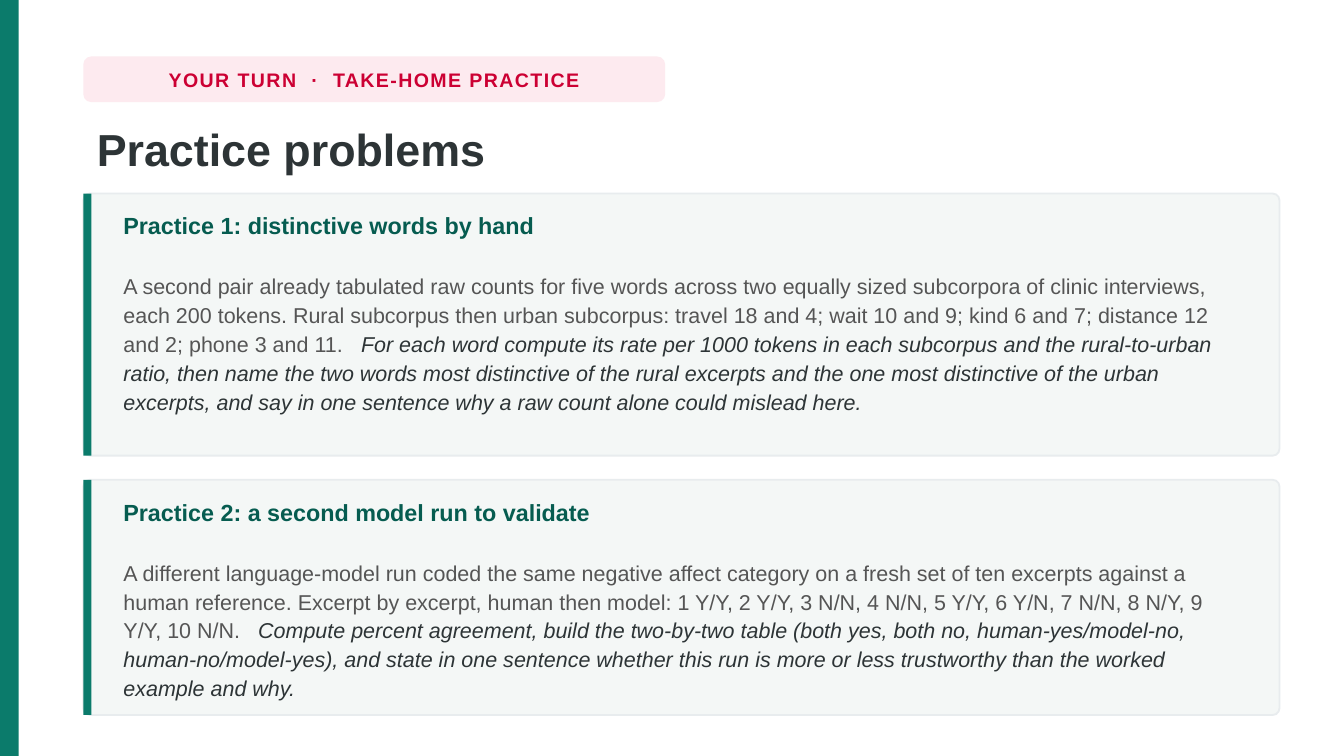
from pptx import Presentation
from pptx.dml.color import RGBColor
from pptx.enum.shapes import MSO_SHAPE
from pptx.enum.text import MSO_ANCHOR, MSO_AUTO_SIZE, PP_ALIGN
from pptx.util import Inches, Pt

TAG = ["YOUR TURN", "·", "TAKE-HOME PRACTICE"]
TITLE = "Practice problems"
CARDS = [
    {
        "top": 1.44, "height": 1.95,
        "head": "Practice 1: distinctive words by hand",
        "data": "A second pair already tabulated raw counts for five words across "
                "two equally sized subcorpora of clinic interviews, each 200 tokens. "
                "Rural subcorpus then urban subcorpus: travel 18 and 4; wait 10 and 9; "
                "kind 6 and 7; distance 12 and 2; phone 3 and 11.",
        "task": "For each word compute its rate per 1000 tokens in each subcorpus and "
                "the rural-to-urban ratio, then name the two words most distinctive of "
                "the rural excerpts and the one most distinctive of the urban excerpts, "
                "and say in one sentence why a raw count alone could mislead here.",
    },
    {
        "top": 3.57, "height": 1.75,
        "head": "Practice 2: a second model run to validate",
        "data": "A different language-model run coded the same negative affect category "
                "on a fresh set of ten excerpts against a human reference. Excerpt by "
                "excerpt, human then model: 1 Y/Y, 2 Y/Y, 3 N/N, 4 N/N, 5 Y/Y, 6 Y/N, "
                "7 N/N, 8 N/Y, 9 Y/Y, 10 N/N.",
        "task": "Compute percent agreement, build the two-by-two table (both yes, both "
                "no, human-yes/model-no, human-no/model-yes), and state in one sentence "
                "whether this run is more or less trustworthy than the worked example "
                "and why.",
    },
]

THEME = {
    "font": "Arial",
    "green": "0B7B6B", "blush": "FDEAEF", "card": "F4F7F6", "edge": "E8ECEE",
    "tag": {"size": 10.5, "color": "CC0033", "bold": True},
    "title": {"size": 24, "color": "2D3436", "bold": True},
    "head": {"size": 12.5, "color": "065C50", "bold": True},
    "data": {"size": 11.5, "color": "555555"},
    "task": {"size": 11.5, "color": "2D3436", "italic": True},
}
WIDE = 10
HIGH = WIDE * 9 / 16
LEFT, SPAN = 0.62, 8.9
BAR, PAD = 0.06, 0.08


def box(slide, rect, fill, radius=0, line=None):
    kind = MSO_SHAPE.ROUNDED_RECTANGLE if radius else MSO_SHAPE.RECTANGLE
    shape = slide.shapes.add_shape(kind, *map(Inches, rect))
    shape.shadow.inherit = False
    if radius:
        shape.adjustments[0] = radius / min(rect[2:])
    shape.fill.solid()
    shape.fill.fore_color.rgb = RGBColor.from_string(fill)
    if line:
        shape.line.color.rgb = RGBColor.from_string(line)
        shape.line.width = Pt(1)
    else:
        shape.line.fill.background()
    return shape


def style(run, look, track=0):
    """Apply a theme look; track is extra letter spacing in points."""
    look = THEME[look]
    font = run.font
    font.name = THEME["font"]
    font.size = Pt(look["size"])
    font.bold = look.get("bold", False)
    font.italic = look.get("italic", False)
    font.color.rgb = RGBColor.from_string(look["color"])
    if track:
        run._r.get_or_add_rPr().set("spc", str(round(track * 100)))


def write(par, parts, gap=0, track=0):
    """Add (text, look) runs, parted by one space widened by gap points."""
    for i, (text, look) in enumerate(parts):
        if i:
            space = par.add_run()
            space.text = " "
            style(space, look, gap)
        run = par.add_run()
        run.text = text
        style(run, look, track)


def add_tag(slide):
    tag = box(slide, (LEFT, 0.42, 4.33, 0.34), THEME["blush"], 0.06)
    frame = tag.text_frame
    frame.vertical_anchor = MSO_ANCHOR.MIDDLE
    par = frame.paragraphs[0]
    par.alignment = PP_ALIGN.CENTER
    write(par, [(text, "tag") for text in TAG], gap=4.4, track=0.8)


def add_title(slide):
    title = slide.shapes.title
    title.left, title.top = Inches(LEFT), Inches(0.84)
    title.width, title.height = Inches(SPAN), Inches(0.56)
    frame = title.text_frame
    frame.text = TITLE
    frame.auto_size = MSO_AUTO_SIZE.NONE
    frame.vertical_anchor = MSO_ANCHOR.MIDDLE
    frame.margin_top, frame.margin_bottom = Inches(0.03), Inches(0.07)
    par = frame.paragraphs[0]
    par.alignment = PP_ALIGN.LEFT
    par.line_spacing = 1.02
    style(par.runs[0], "title")


def add_card(slide, card):
    top, high = card["top"], card["height"]
    box(slide, (LEFT, top, SPAN, high), THEME["card"], 0.05, THEME["edge"])
    box(slide, (LEFT, top, BAR, high), THEME["green"])
    rect = (LEFT + 0.2, top + PAD, SPAN - 0.42, high - 2 * PAD)
    frame = slide.shapes.add_textbox(*map(Inches, rect)).text_frame
    frame.word_wrap = True
    frame.margin_top = frame.margin_bottom = Inches(0.03)
    head, body = frame.paragraphs[0], frame.add_paragraph()
    head.line_spacing = body.line_spacing = 1.12
    head.space_after = Pt(16.5)
    write(head, [(card["head"], "head")])
    write(body, [(card[key], key) for key in ("data", "task")], gap=6.4)


def main():
    deck = Presentation()
    deck.slide_width, deck.slide_height = Inches(WIDE), Inches(HIGH)
    slide = deck.slides.add_slide(deck.slide_layouts[5])
    box(slide, (0, 0, 0.14, HIGH), THEME["green"])
    add_tag(slide)
    add_title(slide)
    for card in CARDS:
        add_card(slide, card)
    deck.save("out.pptx")


if __name__ == "__main__":
    main()
